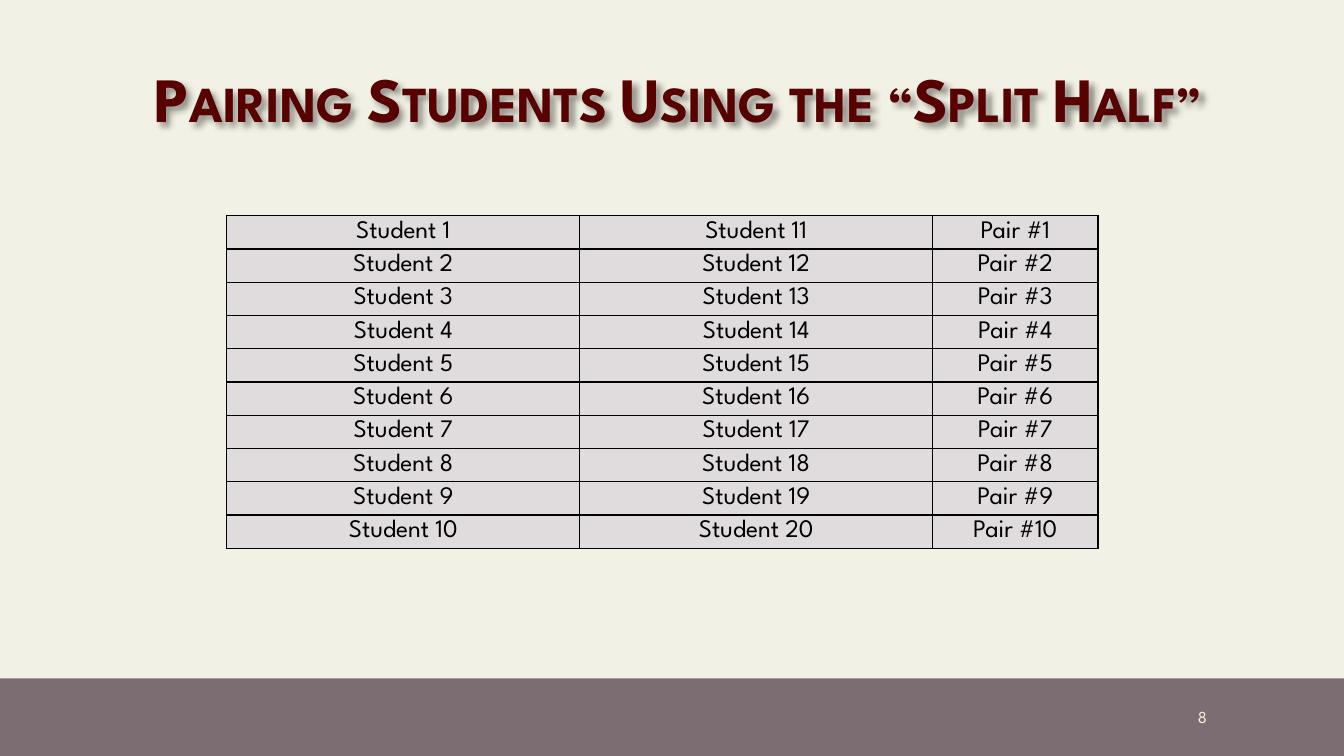
from lxml import etree
from pptx import Presentation
from pptx.dml.color import RGBColor
from pptx.enum.shapes import MSO_SHAPE
from pptx.enum.text import MSO_ANCHOR, PP_ALIGN
from pptx.oxml import parse_xml
from pptx.oxml.ns import nsdecls, qn
from pptx.util import Inches, Pt

CREAM = RGBColor(0xF1, 0xF1, 0xE5)
MAUVE = RGBColor(0x7C, 0x6D, 0x72)
PALE = RGBColor(0xFA, 0xF3, 0xD9)
MAROON = RGBColor(0x57, 0x01, 0x00)
GREY = RGBColor(0xE0, 0xDC, 0xDD)
BLACK = RGBColor(0, 0, 0)
FONT = "League Spartan"
RECT = MSO_SHAPE.RECTANGLE
MIDDLE = MSO_ANCHOR.MIDDLE
CENTER, RIGHT = PP_ALIGN.CENTER, PP_ALIGN.RIGHT
PAIRS = 10


def write(frame, text, size, color, align):
    para = frame.paragraphs[0]
    para.alignment = align
    run = para.add_run()
    run.text = text
    run.font.name = FONT
    run.font.size = Pt(size)
    run.font.color.rgb = color
    return para, run


def border(cell):
    """Draw a thin black line on all four sides of a cell."""
    props = cell._tc.get_or_add_tcPr()
    for spot, side in enumerate(("lnL", "lnR", "lnT", "lnB")):
        props.insert(spot, parse_xml(
            f'<a:{side} {nsdecls("a")} w="12700"><a:solidFill>'
            f'<a:srgbClr val="{BLACK}"/></a:solidFill></a:{side}>'))


deck = Presentation()
deck.slide_width, deck.slide_height = Inches(13.33), Inches(7.5)
slide = deck.slides.add_slide(deck.slide_layouts[6])
slide.background.fill.solid()
slide.background.fill.fore_color.rgb = CREAM

# Footer band and page number
band = slide.shapes.add_shape(RECT, 0, Inches(6.73), Inches(13.33), Inches(0.77))
band.shadow.inherit = False
band.fill.solid()
band.fill.fore_color.rgb = MAUVE
band.line.fill.background()

page = slide.shapes.add_textbox(Inches(10.2), Inches(6.91), Inches(1.87), Inches(0.4))
page.text_frame.word_wrap = True
page.text_frame.vertical_anchor = MIDDLE
write(page.text_frame, "8", 12, PALE, RIGHT)

# Title in small capitals with a soft shadow
title = slide.shapes.add_textbox(Inches(0.51), Inches(0.27), Inches(12.44), Inches(1.48))
title.text_frame.word_wrap = True
title.text_frame.vertical_anchor = MIDDLE
para, run = write(title.text_frame, "Pairing Students Using the “Split Half”",
                  45, MAROON, CENTER)
para.line_spacing = 0.9
run.font.bold = True
run.font._element.set("cap", "small")
effects = etree.SubElement(title._element.spPr, qn("a:effectLst"))
effects.append(parse_xml(
    f'<a:outerShdw {nsdecls("a")} blurRad="50800" dist="50800" dir="2700000">'
    f'<a:srgbClr val="{BLACK}"><a:alpha val="40000"/></a:srgbClr></a:outerShdw>'))

# Student pairs: each of the first half meets one of the second
table = slide.shapes.add_table(PAIRS, 3, Inches(2.25), Inches(2.14),
                               Inches(8.64), Inches(0.33 * PAIRS)).table
table.first_row = table.horz_banding = False
for column, width in zip(table.columns, (3.5, 3.5, 1.64)):
    column.width = Inches(width)
for row in range(PAIRS):
    num = row + 1
    labels = (f"Student {num}", f"Student {num + PAIRS}", f"Pair #{num}")
    for col, label in enumerate(labels):
        cell = table.cell(row, col)
        cell.vertical_anchor = MIDDLE
        cell.margin_top = cell.margin_bottom = Inches(0.01)
        cell.fill.solid()
        cell.fill.fore_color.rgb = GREY
        border(cell)
        write(cell.text_frame, label, 18, BLACK, CENTER)

deck.save("out.pptx")
